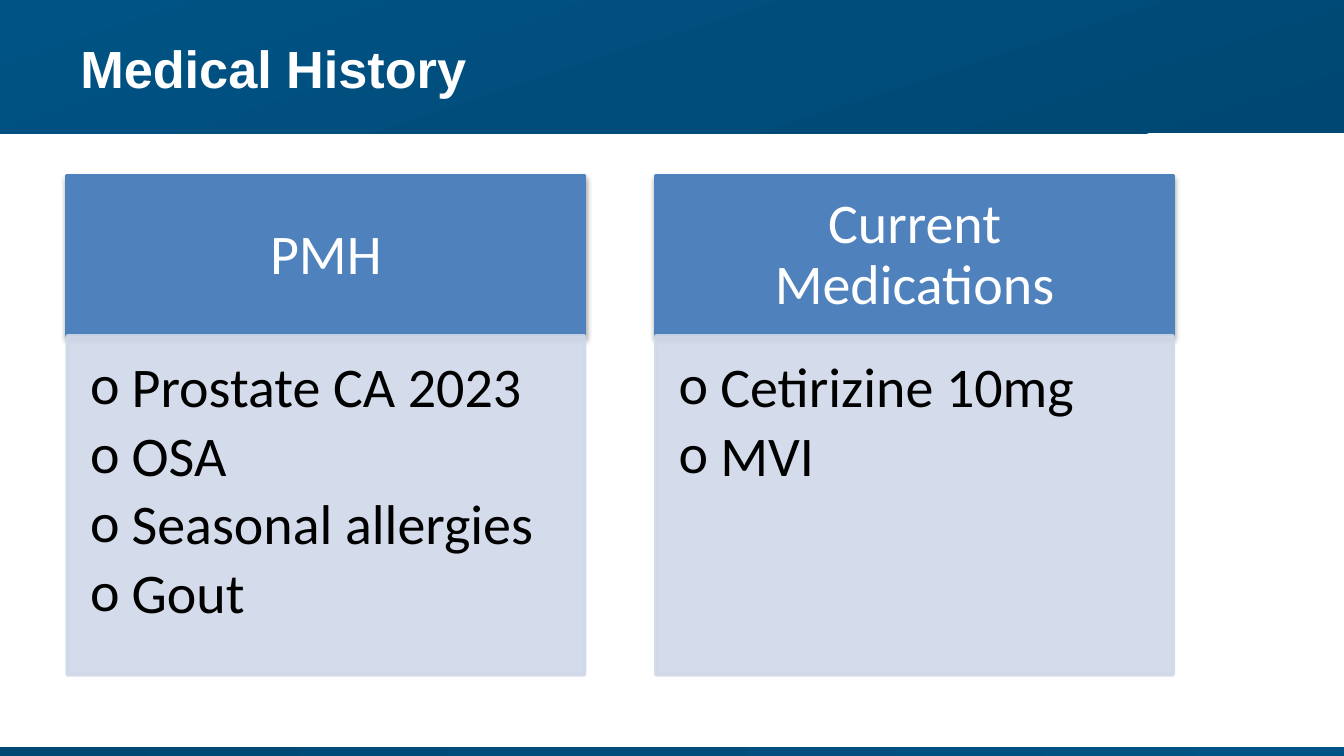
from lxml import etree
from pptx import Presentation
from pptx.dml.color import RGBColor
from pptx.enum.shapes import MSO_SHAPE
from pptx.enum.text import MSO_ANCHOR, PP_ALIGN
from pptx.oxml import parse_xml
from pptx.oxml.ns import nsdecls, qn
from pptx.util import Inches, Pt

RECT = MSO_SHAPE.RECTANGLE
TOP, MIDDLE = MSO_ANCHOR.TOP, MSO_ANCHOR.MIDDLE
LEFT, CENTER = PP_ALIGN.LEFT, PP_ALIGN.CENTER

COLORS = {
    "navy": "004773",
    "blue": "005385",
    "head": "4F81BD",
    "body": "D0D8E8",
    "white": "FFFFFF",
    "black": "000000",
}

CARDS = [
    ("PMH", ["Prostate CA 2023", "OSA", "Seasonal allergies", "Gout"]),
    ("Current Medications", ["Cetirizine 10mg", "MVI"]),
]
WIDTH = 10
CARD_X, CARD_Y, CARD_W, STEP = 0.5, 1.31, 3.85, 4.38
HEAD_H, BODY_H = 1.19, 2.52


def rgb(name):
    return RGBColor.from_string(COLORS[name])


def add_band(slide, top, height, angle):
    """Full-width gradient band."""
    band = slide.shapes.add_shape(
        RECT, 0, Inches(top), Inches(WIDTH), Inches(height))
    band.shadow.inherit = False
    band.line.fill.background()
    band.fill.gradient()
    band.fill.gradient_angle = angle
    for stop, name in zip(band.fill.gradient_stops, ("navy", "blue")):
        stop.color.rgb = rgb(name)


def add_box(group, left, top, height, color):
    """Card part with fill and line of one colour."""
    box = group.shapes.add_shape(
        RECT, Inches(left), Inches(top), Inches(CARD_W), Inches(height))
    box.shadow.inherit = False
    box.fill.solid()
    box.fill.fore_color.rgb = rgb(color)
    box.line.color.rgb = rgb(color)
    box.line.width = Pt(2)
    return box


def set_frame(frame, anchor, insets):
    frame.word_wrap = True
    frame.vertical_anchor = anchor
    (frame.margin_left, frame.margin_top,
     frame.margin_right, frame.margin_bottom) = map(Inches, insets)


def style(para, size, face, color, align=LEFT, bold=False):
    para.alignment = align
    for run in para.runs:
        run.font.size = Pt(size)
        run.font.name = face
        run.font.bold = bold
        run.font.color.rgb = rgb(color)


def add_shadow(shape):
    effects = shape._element.spPr.find(qn("a:effectLst"))
    effects.append(parse_xml(
        f'<a:outerShdw {nsdecls("a")} blurRad="{Pt(3.1)}" dist="{Pt(1.6)}" '
        'dir="5400000" rotWithShape="0"><a:srgbClr val="000000">'
        '<a:alpha val="38000"/></a:srgbClr></a:outerShdw>'))


def set_alpha(shape, percent):
    """Make fill and line partly transparent."""
    for color in shape._element.spPr.iter(qn("a:srgbClr")):
        etree.SubElement(color, qn("a:alpha")).set("val", str(percent * 1000))


def add_bullet(para):
    props = para._p.get_or_add_pPr()
    props.set("marL", str(Inches(0.31)))
    props.set("indent", str(-Inches(0.31)))
    etree.SubElement(props, qn("a:buFont")).set("typeface", "Calibri")
    etree.SubElement(props, qn("a:buChar")).set("char", "o")


def add_title(slide, text):
    box = slide.shapes.add_textbox(
        Inches(0.5), Inches(0.01), Inches(9), Inches(0.99))
    set_frame(box.text_frame, MIDDLE, (0.1, 0.05, 0.1, 0.05))
    box.text_frame.text = text
    style(box.text_frame.paragraphs[0], 28, "Arial", "white", bold=True)


def add_card(group, left, title, items):
    # Heading
    head = add_box(group, left, CARD_Y, HEAD_H, "head")
    add_shadow(head)
    set_frame(head.text_frame, MIDDLE, (0.23, 0.13, 0.23, 0.13))
    head.text_frame.text = title
    para = head.text_frame.paragraphs[0]
    para.line_spacing = 0.9
    style(para, 30, "Calibri", "white", CENTER)

    # Bulleted list
    body = add_box(group, left, CARD_Y + HEAD_H, BODY_H, "body")
    set_alpha(body, 90)
    set_frame(body.text_frame, TOP, (0.17, 0.17, 0.23, 0.26))
    body.text_frame.text = "\n".join(items)
    for para in body.text_frame.paragraphs:
        add_bullet(para)
        para.line_spacing = 0.9
        para.space_after = Pt(4.5)
        style(para, 30, "Calibri", "black")


def main():
    # Widescreen slide, 16 to 9
    deck = Presentation()
    deck.slide_width, deck.slide_height = Inches(WIDTH), Inches(WIDTH * 9 / 16)
    slide = deck.slides.add_slide(deck.slide_layouts[6])

    # Bands and title
    add_band(slide, 0, 0.99, 108)
    add_band(slide, 5.56, 0.08, 0)
    add_title(slide, "Medical History")

    # Cards
    group = slide.shapes.add_group_shape()
    for i, (title, items) in enumerate(CARDS):
        add_card(group, CARD_X + i * STEP, title, items)

    deck.save("out.pptx")


if __name__ == "__main__":
    main()
